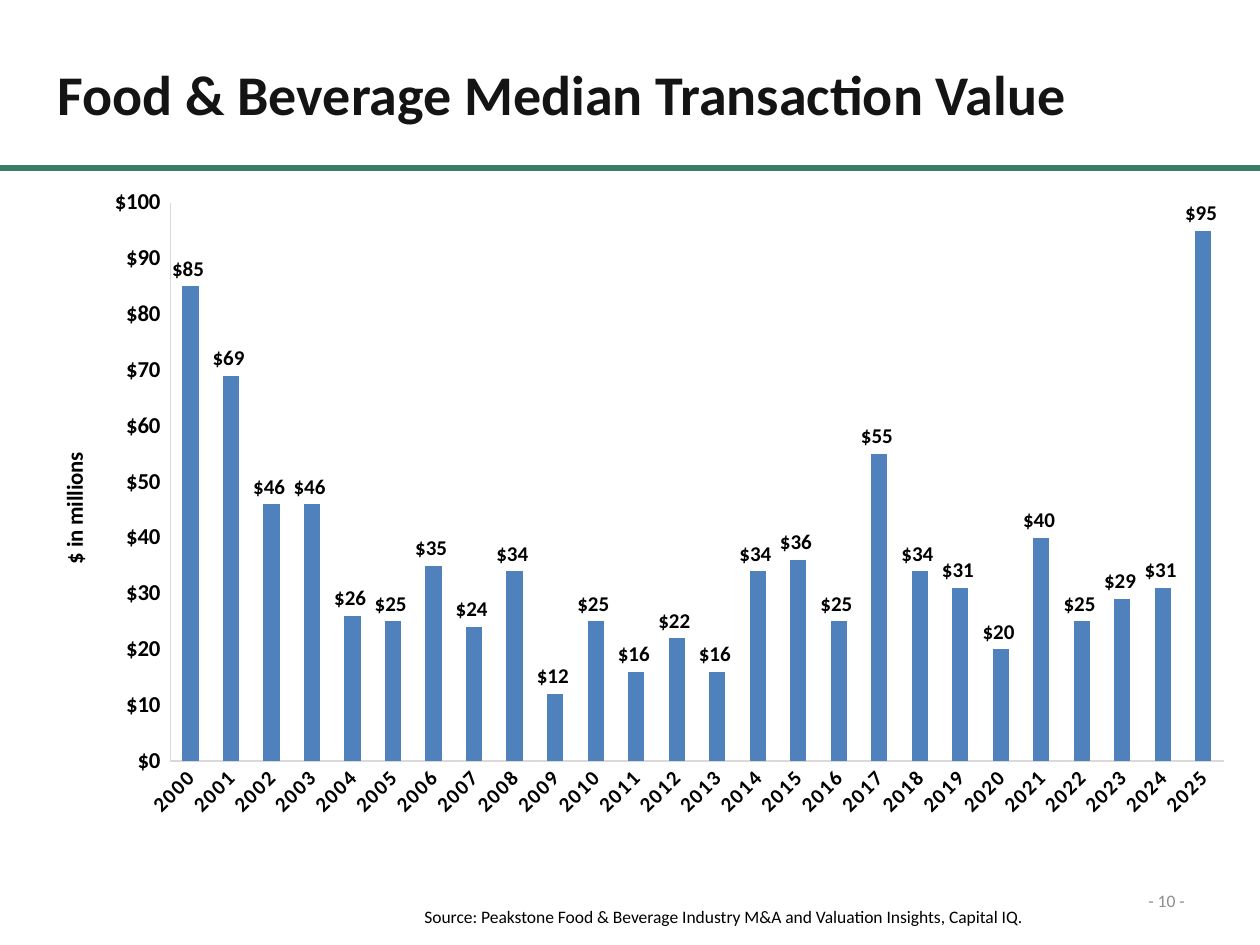
from lxml import etree
from pptx import Presentation
from pptx import util as u
from pptx.chart.data import CategoryChartData
from pptx.dml.color import RGBColor
from pptx.enum import chart as ch, shapes, text
from pptx.oxml.ns import qn

PX = u.Inches(1) / 126
FONT = "Calibri"
MONEY = '"$"#,##0_);\\("$"#,##0\\)'
VALUES = [85, 69, 46, 46, 26, 25, 35, 24, 34, 12, 25, 16, 22,
          16, 34, 36, 25, 55, 34, 31, 20, 40, 25, 29, 31, 95]


def px(*lengths):
    return [u.Emu(round(n * PX)) for n in lengths]


def rgb(value):
    return RGBColor.from_string(value)


def set_font(font, size, color="000000", bold=False):
    for name, value in dict(name=FONT, size=u.Pt(size), bold=bold).items():
        setattr(font, name, value)
    font.color.rgb = rgb(color)


def set_layout(parent, index, **values):
    """Place a chart part by fractions of the chart area."""
    for old in parent.findall(qn("c:layout")):
        parent.remove(old)
    layout = etree.Element(qn("c:layout"))
    manual = etree.SubElement(layout, qn("c:manualLayout"))
    for tag, value in values.items():
        etree.SubElement(manual, qn(f"c:{tag}")).set("val", str(value))
    parent.insert(index, layout)


class Deck:
    def __init__(self):
        self.prs = Presentation()
        self.prs.slide_width, self.prs.slide_height = px(1260, 945)
        self.s = self.prs.slides.add_slide(self.prs.slide_layouts[5])

    def set_text(self, sp, words, size, color, bold=False, wrap=False,
                 align=text.PP_ALIGN.LEFT, anchor=text.MSO_ANCHOR.TOP):
        tf = sp.text_frame
        tf.text = words
        tf.word_wrap, tf.vertical_anchor = wrap, anchor
        p = tf.paragraphs[0]
        p.alignment = align
        set_font(p.runs[0].font, size, color, bold)

    def title(self, box, words):
        sp = self.s.shapes.title
        sp.left, sp.top, sp.width, sp.height = px(*box)
        self.set_text(sp, words, 32, "141414", bold=True)

    def label(self, box, words, color="000000", **style):
        self.set_text(self.s.shapes.add_textbox(*px(*box)), words, 10, color, **style)

    def rule(self, ends, color, width):
        line = self.s.shapes.add_connector(shapes.MSO_CONNECTOR.STRAIGHT, *px(*ends))
        line.line.color.rgb, line.line.width = rgb(color), u.Pt(width)
        etree.SubElement(line._element.spPr, qn("a:effectLst"))

    def axis(self, axis, size):
        axis.has_major_gridlines = False
        axis.major_tick_mark = axis.minor_tick_mark = ch.XL_TICK_MARK.NONE
        axis.format.line.color.rgb, axis.format.line.width = rgb("D9D9D9"), u.Pt(0.75)
        set_font(axis.tick_labels.font, size, bold=True)

    def column_chart(self, box, cats, values):
        data = CategoryChartData(number_format=MONEY)
        data.categories = cats
        data.add_series("Series 1", values)
        chart = self.s.shapes.add_chart(
            ch.XL_CHART_TYPE.COLUMN_CLUSTERED, *px(*box), data).chart
        chart.has_legend = chart.has_title = False
        set_font(chart.font, 13, bold=True)
        set_layout(chart._chartSpace.chart.plotArea, 0, layoutTarget="inner",
                   xMode="edge", yMode="edge", x=0.106, y=0.021, w=0.878, h=0.862)

        # Columns and their labels
        plot = chart.plots[0]
        plot.gap_width, plot.vary_by_categories = 150, False
        fill = plot.series[0].format.fill
        fill.solid()
        fill.fore_color.rgb = rgb("4F81BD")
        plot.has_data_labels = True
        labels = plot.data_labels
        for name, value in dict(show_value=True, number_format=MONEY,
                                number_format_is_linked=False,
                                position=ch.XL_LABEL_POSITION.OUTSIDE_END).items():
            setattr(labels, name, value)
        set_font(labels.font, 12, bold=True)

        # Year axis with slanted, spaced labels
        years = chart.category_axis
        self.axis(years, 12)
        tx = years._element.find(qn("c:txPr"))
        tx.find(qn("a:bodyPr")).set("rot", "-2700000")
        next(tx.iter(qn("a:defRPr"))).set("spc", "100")

        # Money axis with an upright title
        money = chart.value_axis
        self.axis(money, 13)
        money.minimum_scale, money.maximum_scale, money.major_unit = 0, 100, 10
        money.tick_labels.number_format = MONEY
        money.tick_labels.number_format_is_linked = False
        tf = money.axis_title.text_frame
        tf.text = "$ in millions"
        set_font(tf.paragraphs[0].runs[0].font, 13, bold=True)
        tf._txBody.find(qn("a:bodyPr")).set("rot", "-5400000")
        set_layout(money.axis_title._element, 1, xMode="edge", yMode="edge",
                   x=0.01, y=0.4)


def main():
    d = Deck()
    # Heading
    d.rule((0, 168, 1260, 168), "3C7D69", 3)
    d.title((45, 53, 1043, 81), "Food & Beverage Median Transaction Value")
    # Chart
    d.column_chart((43, 189, 1200, 648), [str(y) for y in range(2000, 2026)], VALUES)
    # Footer
    d.label((1092, 876, 105, 50), "- 10 -", "8C8C8C", wrap=True,
            align=text.PP_ALIGN.RIGHT, anchor=text.MSO_ANCHOR.MIDDLE)
    d.label((412, 900, 639, 34), "Source: Peakstone Food & Beverage Industry M&A "
            "and Valuation Insights, Capital IQ.")
    d.prs.save("out.pptx")


if __name__ == "__main__":
    main()
